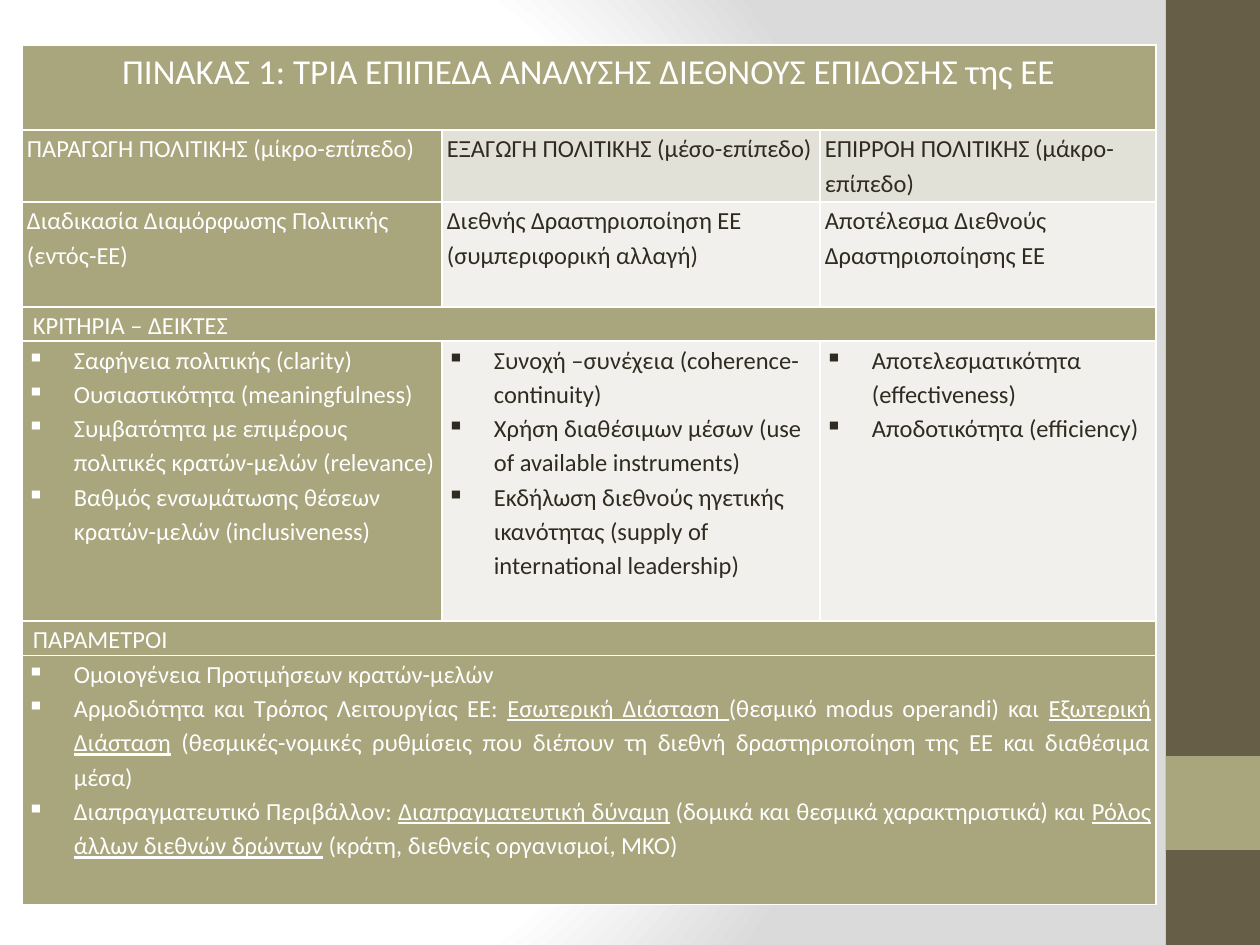
from dataclasses import dataclass

from lxml import etree
from pptx import Presentation
from pptx.dml.color import RGBColor
from pptx.enum.shapes import MSO_SHAPE
from pptx.enum.text import PP_ALIGN
from pptx.oxml.ns import qn
from pptx.util import Emu, Pt

RECTANGLE = MSO_SHAPE.RECTANGLE
LEFT, CENTER, JUSTIFY = PP_ALIGN.LEFT, PP_ALIGN.CENTER, PP_ALIGN.JUSTIFY
EMU_PER_PX = 914400 / 126
BLANK_LAYOUT = 6


@dataclass(frozen=True)
class Theme:
    font: str = "Calibri"
    title_size: int = 20
    body_size: int = 14
    line_spacing: float = 1.15
    white: str = "FFFFFF"
    dark: str = "2F2B20"
    olive: str = "A9A57C"
    brown: str = "675E47"
    header: str = "E2E1D7"
    pale: str = "F1F0EC"
    gray: str = "DADADA"


THEME = Theme()

COLUMN_WIDTHS = [420, 378, 336]
ROW_HEIGHTS = [85, 72, 105, 34, 280, 34, 249]

TITLE = "ΠΙΝΑΚΑΣ 1: ΤΡΙΑ ΕΠΙΠΕΔΑ ΑΝΑΛΥΣΗΣ ΔΙΕΘΝΟΥΣ ΕΠΙΔΟΣΗΣ της ΕΕ"
LEVELS = [
    "ΠΑΡΑΓΩΓΗ ΠΟΛΙΤΙΚΗΣ (μίκρο-επίπεδο)",
    "ΕΞΑΓΩΓΗ ΠΟΛΙΤΙΚΗΣ (μέσο-επίπεδο)",
    "ΕΠΙΡΡΟΗ ΠΟΛΙΤΙΚΗΣ (μάκρο-επίπεδο)",
]
PROCESSES = [
    "Διαδικασία Διαμόρφωσης Πολιτικής (εντός-ΕΕ)",
    "Διεθνής Δραστηριοποίηση ΕΕ (συμπεριφορική αλλαγή)",
    "Αποτέλεσμα Διεθνούς Δραστηριοποίησης ΕΕ",
]
CRITERIA = [
    [
        ["Σαφήνεια πολιτικής (clarity)"],
        ["Ουσιαστικότητα (meaningfulness)"],
        ["Συμβατότητα με επιμέρους πολιτικές κρατών-μελών (relevance)"],
        ["Βαθμός ενσωμάτωσης θέσεων κρατών-μελών (inclusiveness)"],
    ],
    [
        ["Συνοχή –συνέχεια (coherence-continuity)"],
        ["Χρήση διαθέσιμων μέσων (use of available instruments)"],
        ["Εκδήλωση διεθνούς ηγετικής ικανότητας (supply of international leadership)"],
    ],
    [
        ["Αποτελεσματικότητα (effectiveness)"],
        ["Αποδοτικότητα (efficiency)"],
    ],
]
# Runs alternate between plain and underlined.
PARAMETERS = [
    ["Ομοιογένεια Προτιμήσεων κρατών-μελών"],
    [
        "Αρμοδιότητα και Τρόπος Λειτουργίας ΕΕ: ",
        "Εσωτερική Διάσταση ",
        "(θεσμικό modus operandi) και ",
        "Εξωτερική Διάσταση",
        " (θεσμικές-νομικές ρυθμίσεις που διέπουν τη διεθνή δραστηριοποίηση "
        "της ΕΕ και διαθέσιμα μέσα)",
    ],
    [
        "Διαπραγματευτικό Περιβάλλον: ",
        "Διαπραγματευτική δύναμη",
        " (δομικά και θεσμικά χαρακτηριστικά) και ",
        "Ρόλος άλλων διεθνών δρώντων",
        " (κράτη, διεθνείς οργανισμοί, ΜΚΟ)",
    ],
]


def px(length):
    return Emu(round(length * EMU_PER_PX))


def add_color(parent, color):
    etree.SubElement(parent, qn("a:srgbClr"), val=color)


class SlideBuilder:
    def __init__(self, slide, theme):
        self.slide = slide
        self.theme = theme

    def background(self):
        fill = self.slide.background.fill
        fill.gradient()
        gradient = self.slide.element.find(".//" + qn("a:gradFill"))
        for child in list(gradient):
            gradient.remove(child)
        stops = etree.SubElement(gradient, qn("a:gsLst"))
        for position, color in [(0, self.theme.white), (75, self.theme.white), (100, self.theme.gray)]:
            add_color(etree.SubElement(stops, qn("a:gs"), pos=str(position * 1000)), color)
        circle = etree.SubElement(gradient, qn("a:path"), {"path": "circle"})
        etree.SubElement(circle, qn("a:fillToRect"), l="20000", t="50000", r="100000", b="50000")

    def rectangle(self, left, top, width, height, color):
        shape = self.slide.shapes.add_shape(RECTANGLE, px(left), px(top), px(width), px(height))
        shape.shadow.inherit = False
        shape.fill.solid()
        shape.fill.fore_color.rgb = RGBColor.from_string(color)
        shape.line.fill.background()

    def table(self, left, top, column_widths, row_heights):
        frame = self.slide.shapes.add_table(
            len(row_heights), len(column_widths),
            px(left), px(top), px(sum(column_widths)), px(sum(row_heights)),
        )
        table = frame.table
        table.first_row = table.horz_banding = False
        for column, width in zip(table.columns, column_widths):
            column.width = px(width)
        for row, height in zip(table.rows, row_heights):
            row.height = px(height)
        for cell in table.iter_cells():
            self.borders(cell)
        return table

    def borders(self, cell):
        properties = cell._tc.get_or_add_tcPr()
        for side in ("L", "R", "T", "B"):
            line = etree.SubElement(properties, qn("a:ln" + side), w=str(Pt(1)))
            add_color(etree.SubElement(line, qn("a:solidFill")), self.theme.white)

    def cell(self, cell, paragraphs, fill, align=LEFT, size=None, indent=0, bullets=False):
        cell.fill.solid()
        cell.fill.fore_color.rgb = RGBColor.from_string(fill)
        cell.margin_left = cell.margin_right = px(5)
        cell.margin_top = cell.margin_bottom = 0
        color = self.theme.white if fill == self.theme.olive else self.theme.dark
        frame = cell.text_frame
        for index, runs in enumerate(paragraphs):
            paragraph = frame.add_paragraph() if index else frame.paragraphs[0]
            paragraph.alignment = align
            paragraph.line_spacing = self.theme.line_spacing
            properties = paragraph._p.get_or_add_pPr()
            properties.set("marL", str(px(indent)))
            if bullets:
                properties.set("indent", str(-px(indent)))
                etree.SubElement(properties, qn("a:buChar"), char="▪")
            for position, text in enumerate(runs):
                self.run(paragraph, text, color, size or self.theme.body_size, position % 2 == 1)

    def run(self, paragraph, text, color, size, underline):
        run = paragraph.add_run()
        run.text = text
        run.font.name = self.theme.font
        run.font.size = Pt(size)
        run.font.color.rgb = RGBColor.from_string(color)
        if underline:
            run.font.underline = True

    def wide_row(self, table, row, paragraphs, **style):
        table.cell(row, 0).merge(table.cell(row, len(table.columns) - 1))
        self.cell(table.cell(row, 0), paragraphs, self.theme.olive, **style)

    def level_row(self, table, row, contents, fill, **style):
        for column, paragraphs in enumerate(contents):
            cell_fill = fill if column else self.theme.olive
            self.cell(table.cell(row, column), paragraphs, cell_fill, **style)


def main():
    presentation = Presentation()
    presentation.slide_width, presentation.slide_height = px(1260), px(945)
    slide = presentation.slides.add_slide(presentation.slide_layouts[BLANK_LAYOUT])
    builder = SlideBuilder(slide, THEME)

    builder.background()
    builder.rectangle(1166, 0, 94, 945, THEME.brown)
    builder.rectangle(1166, 756, 94, 94, THEME.olive)

    table = builder.table(22, 45, COLUMN_WIDTHS, ROW_HEIGHTS)
    bullet_style = {"indent": 47, "bullets": True}
    builder.wide_row(table, 0, [[TITLE]], align=CENTER, size=THEME.title_size)
    builder.level_row(table, 1, [[[level]] for level in LEVELS], THEME.header)
    builder.level_row(table, 2, [[[process]] for process in PROCESSES], THEME.pale)
    builder.wide_row(table, 3, [["ΚΡΙΤΗΡΙΑ – ΔΕΙΚΤΕΣ"]], indent=6)
    builder.level_row(table, 4, CRITERIA, THEME.pale, **bullet_style)
    builder.wide_row(table, 5, [["ΠΑΡΑΜΕΤΡΟΙ"]], indent=6)
    builder.wide_row(table, 6, PARAMETERS, align=JUSTIFY, **bullet_style)

    presentation.save("out.pptx")


if __name__ == "__main__":
    main()
